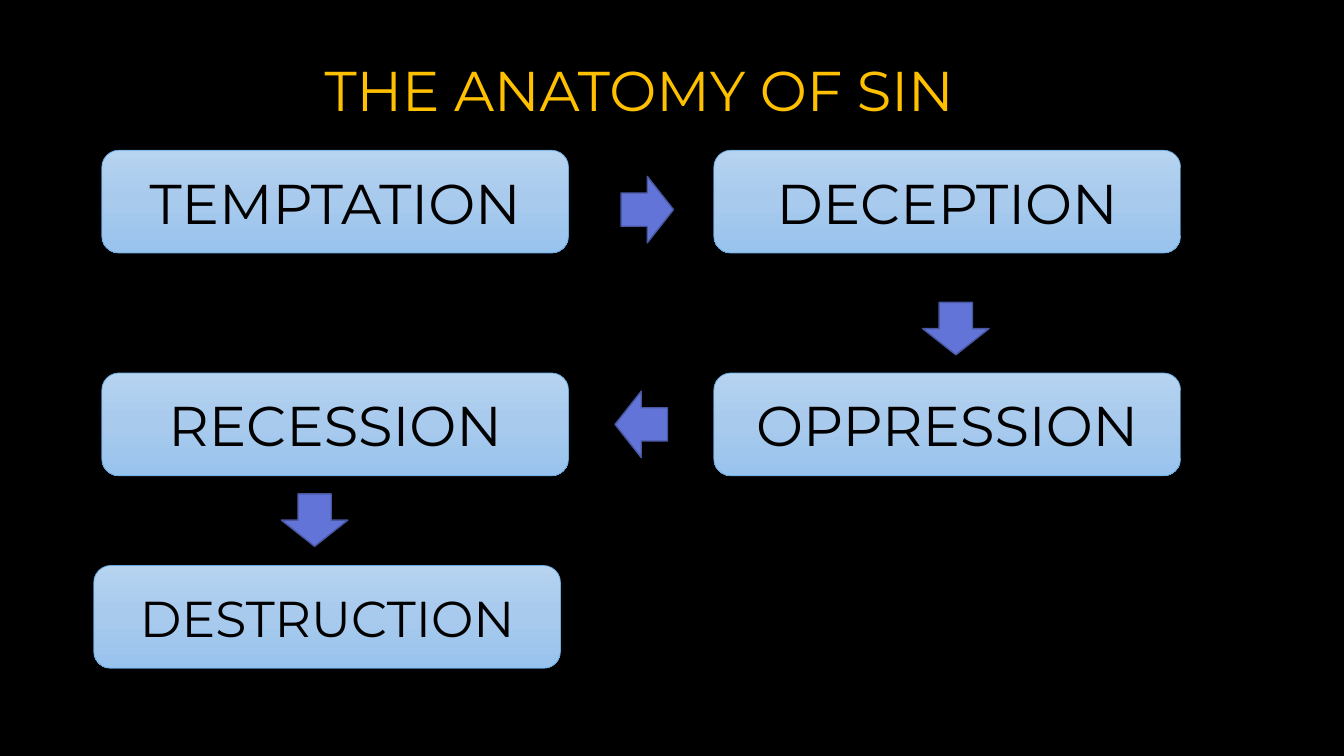
from copy import deepcopy
from dataclasses import dataclass

from pptx import Presentation
from pptx.dml.color import RGBColor
from pptx.enum.shapes import MSO_SHAPE
from pptx.enum.text import MSO_ANCHOR, MSO_AUTO_SIZE, PP_ALIGN
from pptx.oxml.ns import qn
from pptx.util import Inches, Pt


@dataclass(frozen=True)
class Theme:
    font: str = "Montserrat"
    background: str = "000000"
    title: str = "FFC000"
    box_text: str = "000000"
    box_gradient: tuple = ((0, "B6D3F0"), (0.5, "A8CAED"), (1, "98C3ED"))
    box_line: str = "65A9E1"
    arrow: str = "6274D8"
    arrow_line: str = "4956A0"
    large: int = 40
    medium: int = 36


THEME = Theme()
BOX_W, BOX_H = 4.63, 1.02
ARROW_W, ARROW_H = 0.52, 0.66
LEFT, RIGHT = 1.01, 7.08
TOP, MIDDLE, BOTTOM = 1.49, 3.7, 5.61

# Stage name, left, top, type size
STAGES = [
    ("TEMPTATION", LEFT, TOP, THEME.large),
    ("DECEPTION", RIGHT, TOP, THEME.large),
    ("OPPRESSION", RIGHT, MIDDLE, THEME.large),
    ("RECESSION", LEFT, MIDDLE, THEME.large),
    ("DESTRUCTION", 0.93, BOTTOM, THEME.medium),
]
# Left, top, rotation
ARROWS = [(6.16, 1.75, 0), (9.22, 2.93, 90), (6.1, 3.88, 180), (2.86, 4.83, 90)]


def color(value):
    return RGBColor.from_string(value)


def write(tf, text, size, text_color):
    tf.text = text
    p = tf.paragraphs[0]
    font = p.runs[0].font
    font.name, font.size = THEME.font, Pt(size)
    font.color.rgb = color(text_color)
    return p


def add_title(s, text, left, top, width, height):
    box = s.shapes.add_textbox(Inches(left), Inches(top), Inches(width), Inches(height))
    tf = box.text_frame
    tf.word_wrap = False
    tf.auto_size = MSO_AUTO_SIZE.SHAPE_TO_FIT_TEXT
    write(tf, text, THEME.large, THEME.title)


def add_outlined(s, preset, left, top, width, height, line, weight):
    sp = s.shapes.add_shape(preset, Inches(left), Inches(top), Inches(width), Inches(height))
    sp.shadow.inherit = False
    sp.line.color.rgb = color(line)
    sp.line.width = Pt(weight)
    return sp


def fill_gradient(sp, stops):
    sp.fill.gradient()
    sp.fill.gradient_angle = 270
    # The default gradient has two stops; make room for the middle one
    stop_list = sp.element.spPr.find(".//" + qn("a:gsLst"))
    stop_list.insert(1, deepcopy(stop_list[0]))
    for stop, (position, value) in zip(sp.fill.gradient_stops, stops):
        stop.position = position
        stop.color.rgb = color(value)


def add_stage(s, text, left, top, size):
    sp = add_outlined(s, MSO_SHAPE.FLOWCHART_ALTERNATE_PROCESS, left, top,
                      BOX_W, BOX_H, THEME.box_line, 0.5)
    fill_gradient(sp, THEME.box_gradient)
    sp.text_frame.vertical_anchor = MSO_ANCHOR.MIDDLE
    p = write(sp.text_frame, text, size, THEME.box_text)
    p.alignment = PP_ALIGN.CENTER


def add_arrow(s, left, top, rotation):
    sp = add_outlined(s, MSO_SHAPE.RIGHT_ARROW, left, top,
                      ARROW_W, ARROW_H, THEME.arrow_line, 1)
    sp.fill.solid()
    sp.fill.fore_color.rgb = color(THEME.arrow)
    sp.rotation = rotation


def main():
    prs = Presentation()
    prs.slide_width, prs.slide_height = Inches(13.33), Inches(7.5)
    s = prs.slides.add_slide(prs.slide_layouts[6])
    s.background.fill.solid()
    s.background.fill.fore_color.rgb = color(THEME.background)

    # Title
    add_title(s, "THE ANATOMY OF SIN", 3.12, 0.5, 7.28, 0.77)

    # Stages and the arrows between them
    for stage in STAGES:
        add_stage(s, *stage)
    for arrow in ARROWS:
        add_arrow(s, *arrow)

    prs.save("out.pptx")


if __name__ == "__main__":
    main()
